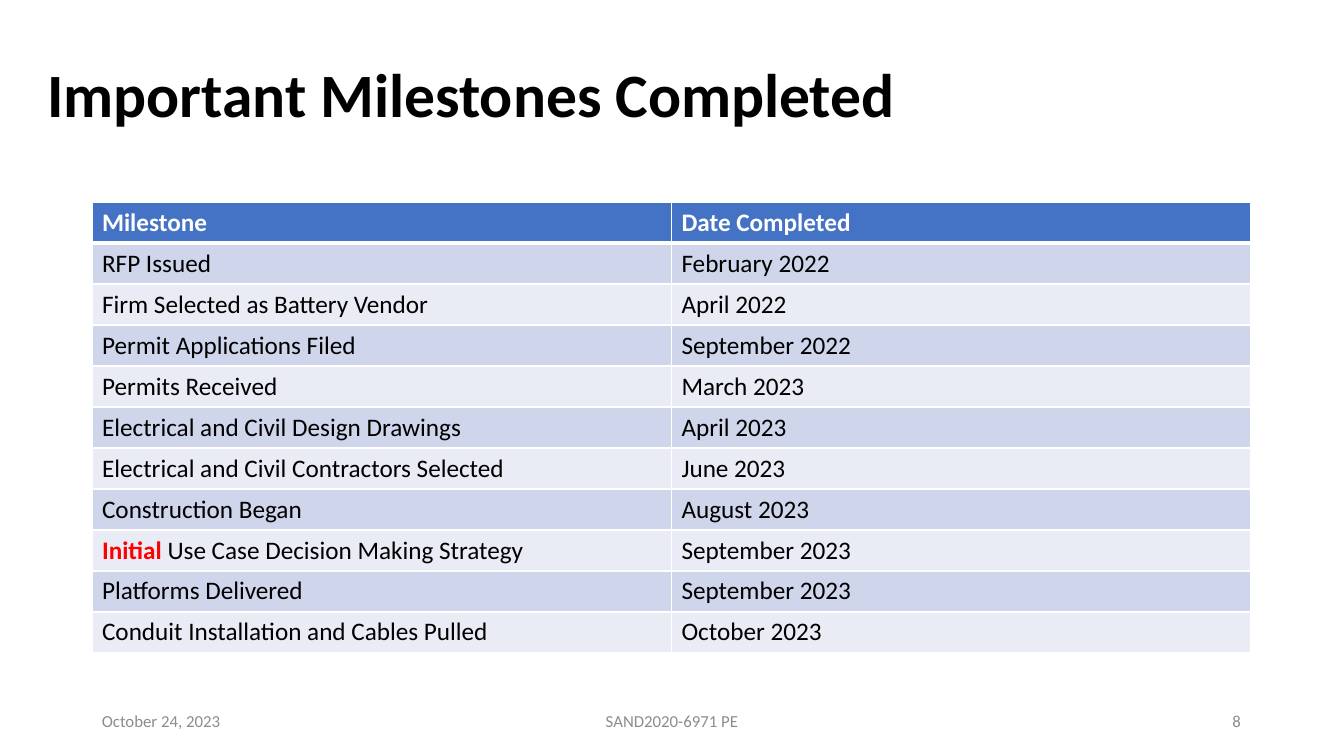
from lxml import etree
from pptx import Presentation
from pptx.dml.color import RGBColor
from pptx.enum.text import MSO_ANCHOR, MSO_AUTO_SIZE, PP_ALIGN
from pptx.oxml.ns import qn
from pptx.util import Emu, Pt

LEFT, CENTER, RIGHT = PP_ALIGN.LEFT, PP_ALIGN.CENTER, PP_ALIGN.RIGHT
MIDDLE = MSO_ANCHOR.MIDDLE
NO_AUTOFIT = MSO_AUTO_SIZE.NONE
TITLE_ONLY = 5

EMU_PER_PX = 914400 / 100.8
FONT = "Calibri"
BLACK, WHITE, RED, GRAY = "000000", "FFFFFF", "FF0000", "8C8C8C"
HEADER_FILL = "4472C4"
BAND_FILLS = ("CFD5EA", "E9EBF5")

HEADER = ("Milestone", "Date Completed")
MILESTONES = [
    ("RFP Issued", "February 2022"),
    ("Firm Selected as Battery Vendor", "April 2022"),
    ("Permit Applications Filed", "September 2022"),
    ("Permits Received", "March 2023"),
    ("Electrical and Civil Design Drawings", "April 2023"),
    ("Electrical and Civil Contractors Selected", "June 2023"),
    ("Construction Began", "August 2023"),
    ("Initial Use Case Decision Making Strategy", "September 2023"),
    ("Platforms Delivered", "September 2023"),
    ("Conduit Installation and Cables Pulled", "October 2023"),
]
HIGHLIGHT = "Initial"


def px(length):
    return Emu(round(length * EMU_PER_PX))


def color(value):
    return RGBColor.from_string(value)


class SlideBuilder:
    def __init__(self, presentation):
        self.slide = presentation.slides.add_slide(presentation.slide_layouts[TITLE_ONLY])

    def style(self, font, size, text_color, bold=False):
        font.name = FONT
        font.size = Pt(size)
        font.bold = bold
        font.color.rgb = color(text_color)

    def fill_frame(self, frame, text, size, text_color, bold=False, align=LEFT):
        frame.word_wrap = True
        frame.auto_size = NO_AUTOFIT
        frame.vertical_anchor = MIDDLE
        paragraph = frame.paragraphs[0]
        paragraph.text = text
        paragraph.alignment = align
        self.style(paragraph.font, size, text_color, bold)
        return paragraph

    def title(self, text, left, top, width, height):
        shape = self.slide.shapes.title
        shape.left, shape.top = px(left), px(top)
        shape.width, shape.height = px(width), px(height)
        paragraph = self.fill_frame(shape.text_frame, text, 44, BLACK, bold=True)
        paragraph.line_spacing = 0.9

    def footer(self, text, left, width, align):
        box = self.slide.shapes.add_textbox(px(left), px(701), px(width), px(40))
        self.fill_frame(box.text_frame, text, 12, GRAY, align=align)

    def borders(self, cell, top, bottom):
        properties = cell._tc.get_or_add_tcPr()
        widths = {"a:lnL": 1, "a:lnR": 1, "a:lnT": top, "a:lnB": bottom}
        for index, (tag, width) in enumerate(widths.items()):
            line = etree.Element(qn(tag), w=str(Pt(width)))
            fill = etree.SubElement(line, qn("a:solidFill"))
            etree.SubElement(fill, qn("a:srgbClr"), val=WHITE)
            properties.insert(index, line)

    def cell(self, cell, text, fill, text_color, bold):
        cell.fill.solid()
        cell.fill.fore_color.rgb = color(fill)
        paragraph = cell.text_frame.paragraphs[0]
        self.style(paragraph.font, 18, text_color, bold)
        if text.startswith(HIGHLIGHT):
            run = paragraph.add_run()
            run.text = HIGHLIGHT
            self.style(run.font, 18, RED, bold=True)
            text = text.removeprefix(HIGHLIGHT)
        run = paragraph.add_run()
        run.text = text
        self.style(run.font, 18, text_color, bold)

    def table(self, rows, left, top, width, row_height):
        table = self.slide.shapes.add_table(
            len(rows), len(rows[0]), px(left), px(top), px(width), px(row_height * len(rows))
        ).table
        for row_index, row in enumerate(rows):
            table.rows[row_index].height = px(row_height)
            is_header = row_index == 0
            fill = HEADER_FILL if is_header else BAND_FILLS[(row_index - 1) % 2]
            text_color = WHITE if is_header else BLACK
            for column_index, text in enumerate(row):
                cell = table.cell(row_index, column_index)
                self.cell(cell, text, fill, text_color, is_header)
                # A thicker rule separates the header from the body
                self.borders(cell, 3 if row_index == 1 else 1, 3 if is_header else 1)


def main():
    presentation = Presentation()
    presentation.slide_width, presentation.slide_height = px(1344), px(756)
    builder = SlideBuilder(presentation)

    # Title
    builder.title("Important Milestones Completed", 37, 40, 1215, 116)

    # Milestone table
    builder.table([HEADER] + MILESTONES, 92, 202, 1159, 41)

    # Footer
    builder.footer("October 24, 2023", 92, 302, LEFT)
    builder.footer("SAND2020-6971 PE", 445, 454, CENTER)
    builder.footer("8", 949, 302, RIGHT)

    presentation.save("out.pptx")


if __name__ == "__main__":
    main()
